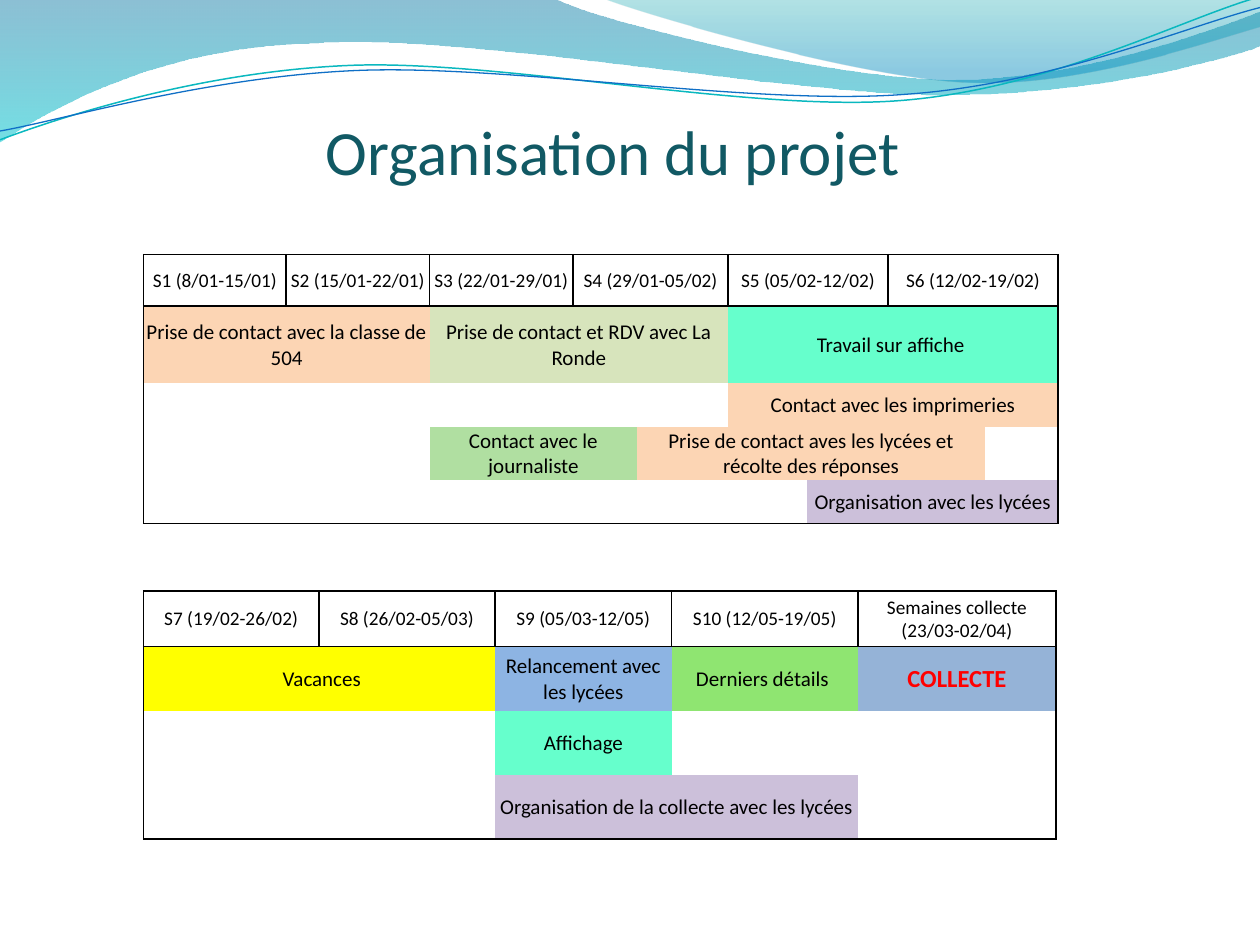
from lxml import etree
from pptx import Presentation
from pptx.dml.color import RGBColor
from pptx.enum.text import MSO_ANCHOR, PP_ALIGN
from pptx.oxml.ns import qn
from pptx.util import Inches, Pt

MIDDLE, TOP = MSO_ANCHOR.MIDDLE, MSO_ANCHOR.TOP
CENTER = PP_ALIGN.CENTER

THEME = {
    "font": "Calibri",
    "ink": "000000", "title": "115964", "alert": "FF0000", "blank": "FFFFFF",
    "peach": "FCD5B4", "olive": "D7E4BC", "mint": "66FFCC", "leaf": "B0DFA1",
    "lilac": "CCC0DA", "yellow": "FFFF00", "sky": "8DB4E3", "lime": "8FE571",
    "steel": "95B3D7", "teal": "0AB8BF", "blue": "0F6FC6",
    "deep": "0074A1", "aqua": "00C6CF", "sea": "00A1A9", "azure": "008BBF",
    "head": 11, "body": 12, "strong": 14, "big": 36,
}

TITLE = "Organisation du projet "

PLANS = [
    {
        "at": (1.14, 2.02),
        "cols": [0.56, 0.57, 0.57, 0.57, 0.41, 0.16, 0.25, 0.32,
                 0.1, 0.41, 0.72, 0.63, 0.64, 0.77, 0.58],
        "rows": [0.41, 0.61, 0.35, 0.41, 0.35],
        "weeks": [("S1 (8/01-15/01)", 2), ("S2 (15/01-22/01)", 2),
                  ("S3 (22/01-29/01)", 4), ("S4 (29/01-05/02)", 3),
                  ("S5 (05/02-12/02)", 2), ("S6 (12/02-19/02)", 2)],
        "tasks": [
            (1, 0, 4, "Prise de contact avec la classe de 504", "peach", {}),
            (1, 4, 7, "Prise de contact et RDV avec La Ronde", "olive", {}),
            (1, 11, 4, "Travail sur affiche ", "mint", {}),
            (2, 11, 4, "Contact avec les imprimeries", "peach", {}),
            (3, 4, 6, "Contact avec le journaliste", "leaf", {}),
            (3, 10, 4, "Prise de contact aves les lycées et récolte des réponses", "peach", {}),
            (4, 12, 3, "Organisation avec les lycées", "lilac", {}),
        ],
        "gaps": [(2, 5), (2, 7), (4, 4), (4, 6), (4, 8)],
    },
    {
        "at": (1.14, 4.69),
        "cols": [1.39, 1.4, 1.4, 1.48, 0.78, 0.79],
        "rows": [0.44, 0.51, 0.51, 0.51],
        "weeks": [("S7 (19/02-26/02)", 1), ("S8 (26/02-05/03)", 1),
                  ("S9 (05/03-12/05)", 1), ("S10 (12/05-19/05)", 1),
                  ("Semaines collecte (23/03-02/04)", 2)],
        "tasks": [
            (1, 0, 2, " Vacances", "yellow", {}),
            (1, 2, 1, "Relancement avec les lycées", "sky", {}),
            (1, 3, 1, "Derniers détails ", "lime", {}),
            (1, 4, 2, "COLLECTE", "steel", {"size": "strong", "color": "alert", "bold": True}),
            (2, 2, 1, "Affichage", "mint", {}),
            (3, 2, 2, "Organisation de la collecte avec les lycées", "lilac", {}),
        ],
        "gaps": [(2, 0), (3, 0)],
    },
]

WAVES = [
    {"grad": [(0, "deep", 45), (1, "aqua", 55)],
     "path": [(0, 0), (4.4, -0.01), (4.76, 0.17, 6.64, 0.63, 7.58, 0.63),
              (8.53, 0.63, 9.58, 0.26, 10, 0.09), (10.01, 0.36),
              (9.83, 0.44, 8.7, 0.76, 7.46, 0.75), (6.22, 0.75, 3.82, 0.28, 2.57, 0.34),
              (1.29, 0.36, 0.46, 0.83, -0.01, 1.13)]},
    {"grad": [(0, "sea", 30), (0.8, "azure", 45)],
     "path": [(4.79, -0.01), (5.09, 0.11, 6.82, 0.62, 7.69, 0.65),
              (8.56, 0.69, 9.61, 0.32, 10, 0.21), (10, 0)]},
    {"line": ("teal", 0.85),
     "path": [(0, 1.11), (0.48, 0.93, 1.58, 0.57, 2.77, 0.52),
              (3.95, 0.47, 5.93, 0.89, 7.13, 0.8), (8.33, 0.71, 9.38, 0.15, 9.98, -0.02)]},
    {"line": ("blue", 0.75),
     "path": [(0, 1.04), (0.47, 0.96, 1.64, 0.61, 2.83, 0.56),
              (4.03, 0.51, 5.97, 0.84, 7.17, 0.75), (8.36, 0.67, 9.41, 0.21, 10, 0.06)]},
]


def rgb(name):
    return RGBColor.from_string(THEME[name])


def write(frame, text, size="body", color="ink", bold=False):
    frame.word_wrap = True
    para = frame.paragraphs[0]
    para.alignment = CENTER
    run = para.add_run()
    run.text = text
    font = run.font
    font.name, font.size, font.bold = THEME["font"], Pt(THEME[size]), bold
    font.color.rgb = rgb(color)


def draw(slide, path, close):
    spots = [(Inches(part[i]), Inches(part[i + 1]))
             for part in path for i in range(0, len(part), 2)]
    pen = slide.shapes.build_freeform(*spots[0])
    pen.add_line_segments(spots[1:], close=close)
    shape = pen.convert_to_shape()
    lines = iter(list(shape._element.iter(qn("a:lnTo"))))
    for part in path[1:]:
        first = next(lines)
        if len(part) == 6:
            curve = etree.Element(qn("a:cubicBezTo"))
            first.addprevious(curve)
            for line in (first, next(lines), next(lines)):
                curve.append(line[0])
                line.getparent().remove(line)
    return shape


def add_wave(slide, wave):
    shape = draw(slide, wave["path"], "grad" in wave)
    shape.shadow.inherit = False
    if "line" in wave:
        color, width = wave["line"]
        shape.fill.background()
        shape.line.color.rgb = rgb(color)
        shape.line.width = Pt(width)
        return
    shape.line.fill.background()
    shape.fill.gradient()
    shape.fill.gradient_angle = 270
    for stop, (pos, color, _) in zip(shape.fill.gradient_stops, wave["grad"]):
        stop.position = pos
        stop.color.rgb = rgb(color)
    for node, (_, _, alpha) in zip(shape._element.iter(qn("a:srgbClr")), wave["grad"]):
        etree.SubElement(node, qn("a:alpha"), val=str(alpha * 1000))


def paint(cell, fill, edges):
    props = cell._tc.get_or_add_tcPr()
    for side in "LRTB":
        line = etree.SubElement(props, qn("a:ln" + side), w=str(Pt(1)))
        if side in edges:
            solid = etree.SubElement(line, qn("a:solidFill"))
            etree.SubElement(solid, qn("a:srgbClr"), val=THEME["ink"])
        else:
            etree.SubElement(line, qn("a:noFill"))
    cell.fill.solid()
    cell.fill.fore_color.rgb = rgb(fill)
    cell.margin_left = cell.margin_right = cell.margin_top = Inches(0.01)
    cell.margin_bottom = 0
    cell.vertical_anchor = MIDDLE


def add_plan(slide, plan):
    cols, rows = plan["cols"], plan["rows"]
    size = (*plan["at"], sum(cols), sum(rows))
    grid = slide.shapes.add_table(len(rows), len(cols), *map(Inches, size)).table
    grid.first_row = grid.horz_banding = False
    for col, width in zip(grid.columns, cols):
        col.width = Inches(width)
    for row, height in zip(grid.rows, rows):
        row.height = Inches(height)

    items, start = list(plan["tasks"]), 0
    for text, span in plan["weeks"]:
        items.append((0, start, span, text, "blank", {"size": "head"}))
        start += span
    items += [(r, c, 2, "", "blank", {}) for r, c in plan["gaps"]]
    taken = {(r, c + i) for r, c, span, *_ in items for i in range(span)}
    items += [(r, c, 1, "", "blank", {}) for r in range(len(rows))
              for c in range(len(cols)) if (r, c) not in taken]

    for r, c, span, text, fill, style in items:
        last = c + span - 1
        edges = "LRTB" if r == 0 else "".join(
            side for side, on in (("L", c == 0), ("R", last == len(cols) - 1),
                                  ("T", r == 1), ("B", r == len(rows) - 1)) if on)
        for i in range(c, last + 1):
            paint(grid.cell(r, i), fill, edges)
        if span > 1:
            grid.cell(r, c).merge(grid.cell(r, last))
        if text:
            write(grid.cell(r, c).text_frame, text, **style)


def main():
    deck = Presentation()
    deck.slide_width, deck.slide_height = Inches(10), Inches(7.5)
    slide = deck.slides.add_slide(deck.slide_layouts[5])
    for wave in WAVES:
        add_wave(slide, wave)
    for plan in PLANS:
        add_plan(slide, plan)
    title = slide.shapes.title
    title.left, title.top, title.width, title.height = map(Inches, (1.69, 0.84, 6.46, 0.71))
    title.text_frame.vertical_anchor = TOP
    write(title.text_frame, TITLE, size="big", color="title")
    deck.save("out.pptx")


if __name__ == "__main__":
    main()
